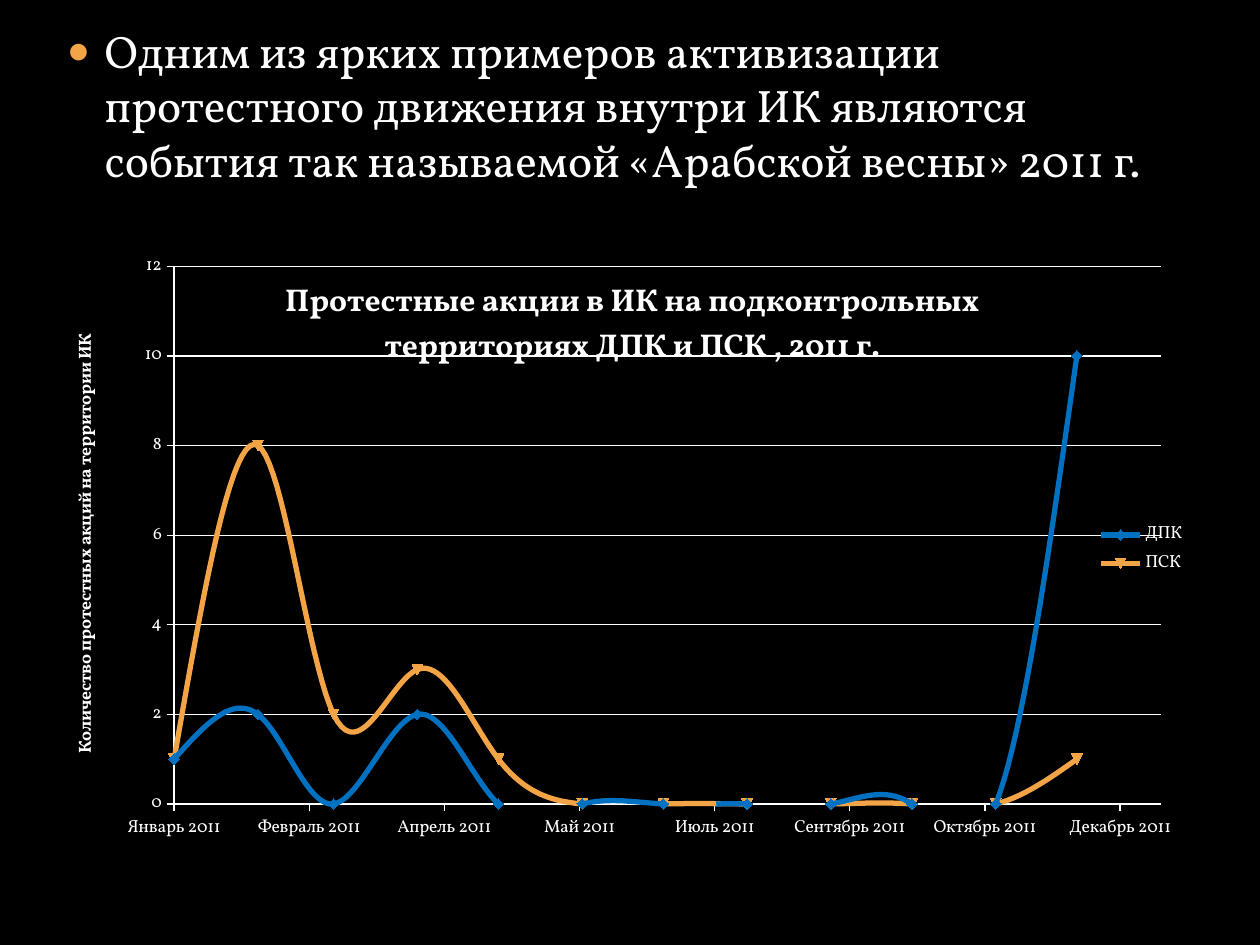
"""Build a slide with a statement and a chart of monthly protest actions."""
import itertools

import pptx
import pptx.chart.data
import pptx.dml.color
import pptx.enum.chart
import pptx.enum.text
import pptx.oxml
import pptx.oxml.ns
import pptx.util

COLORS = {"background": "000000", "text": "FFFFFF", "orange": "F3A447", "blue": "0070C0"}
FONT = "Vollkorn"
STATEMENT = ("Одним из ярких примеров активизации протестного движения внутри ИК "
             "являются события так называемой «Арабской весны» 2011 г.")
CHART_TITLE = "Протестные акции в ИК на подконтрольных территориях ДПК и ПСК , 2011 г."
AXIS_TITLE = "Количество протестных акций на территории ИК"
FIRST_DAY, LAST_DAY = 40544, 40909
MONTH_LENGTHS = [31, 28, 31, 30, 31, 30, 31, 31, 30, 31, 30]
SERIES = {
    "ДПК": ("blue", [1, 2, 0, 2, 0, 0, 0, 0, 0, 0, 0, 10]),
    "ПСК": ("orange", [1, 8, 2, 3, 1, 0, 0, 0, 0, 0, 0, 1]),
}


def color(name):
    return pptx.dml.color.RGBColor.from_string(COLORS[name])


def style_font(font, size, bold=False):
    font.name = FONT
    font.size = pptx.util.Pt(size)
    font.bold = bold
    font.color.rgb = color("text")


def style_line(line, name, width):
    line.color.rgb = color(name)
    line.width = pptx.util.Pt(width)


def place(element, inner=False, **shares):
    """Give a chart part a manual layout in shares of the chart's size."""
    for layout in element.findall(pptx.oxml.ns.qn("c:layout")):
        element.remove(layout)
    target = '<c:layoutTarget val="inner"/>' if inner else ""
    modes = "".join(f'<c:{key}Mode val="edge"/>' for key in "xy")
    values = "".join(f'<c:{key} val="{value}"/>' for key, value in shares.items())
    layout = pptx.oxml.parse_xml(
        f'<c:layout {pptx.oxml.ns.nsdecls("c")}><c:manualLayout>'
        f"{target}{modes}{values}</c:manualLayout></c:layout>")
    overlay = element.find(pptx.oxml.ns.qn("c:overlay"))
    if overlay is None:
        element.insert(0, layout)
    else:
        overlay.addprevious(layout)


def add_statement(slide):
    body = slide.placeholders[1]
    body.left, body.top, body.width, body.height = map(
        pptx.util.Inches, (0.43, 0.13, 8.99, 3.86))
    frame = body.text_frame
    frame.text = STATEMENT
    frame.auto_size = pptx.enum.text.MSO_AUTO_SIZE.NONE
    frame.vertical_anchor = pptx.enum.text.MSO_ANCHOR.TOP
    paragraph = frame.paragraphs[0]
    paragraph.line_spacing = 1.0
    paragraph.space_before = pptx.util.Pt(6)
    style_font(paragraph.runs[0].font, 26)
    properties = paragraph._p.get_or_add_pPr()
    indent = pptx.util.Inches(0.3)
    properties.set("marL", str(indent))
    properties.set("indent", str(-indent))
    namespace = pptx.oxml.ns.nsdecls("a")
    for bullet in (f'<a:buClr {namespace}><a:srgbClr val="{COLORS["orange"]}"/></a:buClr>',
                   f'<a:buSzPct {namespace} val="85000"/>',
                   f'<a:buChar {namespace} char="●"/>'):
        properties.append(pptx.oxml.parse_xml(bullet))


def set_title(owner, text, size, **shares):
    owner.text_frame.text = text
    style_font(owner.text_frame.paragraphs[0].runs[0].font, size, bold=True)
    place(owner._element, **shares)


def style_axis(axis, low, high, step):
    axis.minimum_scale, axis.maximum_scale, axis.major_unit = low, high, step
    axis.major_tick_mark = pptx.enum.chart.XL_TICK_MARK.OUTSIDE
    axis.minor_tick_mark = pptx.enum.chart.XL_TICK_MARK.NONE
    style_line(axis.format.line, "text", 0.75)
    style_font(axis.tick_labels.font, 10)


def add_protest_chart(slide):
    days = list(itertools.accumulate(MONTH_LENGTHS, initial=FIRST_DAY))
    data = pptx.chart.data.XyChartData()
    for name, (_, counts) in SERIES.items():
        series = data.add_series(name)
        for day, count in zip(days, counts):
            series.add_data_point(day, count)
    chart = slide.shapes.add_chart(
        pptx.enum.chart.XL_CHART_TYPE.XY_SCATTER_SMOOTH,
        *map(pptx.util.Inches, (0.51, 2.02, 8.99, 4.65)), data).chart
    style_font(chart.font, 10)
    plot = chart.plots[0]
    plot.vary_by_categories = False
    markers = (pptx.enum.chart.XL_MARKER_STYLE.DIAMOND, None)
    for series, (name, _), marker in zip(plot.series, SERIES.values(), markers):
        series._element.get_or_add_smooth().val = True
        style_line(series.format.line, name, 3)
        series.marker.style = marker
        series.marker.size = 6
        series.marker.format.fill.solid()
        series.marker.format.fill.fore_color.rgb = color(name)
        style_line(series.marker.format.line, name, 0.75)

    style_axis(chart.category_axis, FIRST_DAY, LAST_DAY, 50)
    chart.category_axis.has_major_gridlines = False
    labels = chart.category_axis.tick_labels
    labels.number_format = r"[$-419]mmmm\ yyyy;@"
    labels.number_format_is_linked = False
    style_axis(chart.value_axis, 0, 12, 2)
    chart.value_axis.has_major_gridlines = True
    style_line(chart.value_axis.major_gridlines.format.line, "text", 0.75)

    chart.has_title = True
    set_title(chart.chart_title, CHART_TITLE, 18, x=0.19, y=0.03)
    set_title(chart.value_axis.axis_title, AXIS_TITLE, 10, x=0.005, y=0.13)
    chart.has_legend = True
    chart.legend.position = pptx.enum.chart.XL_LEGEND_POSITION.RIGHT
    chart.legend.include_in_layout = False
    style_font(chart.legend.font, 10)
    place(chart.legend._element, x=0.91, y=0.45)
    plot_area = chart._chartSpace.chart.plotArea
    place(plot_area, inner=True, x=0.097, y=0.02, w=0.871, h=0.918)


def main():
    presentation = pptx.Presentation()
    presentation.slide_width = pptx.util.Inches(10)
    presentation.slide_height = pptx.util.Inches(7.5)
    slide = presentation.slides.add_slide(presentation.slide_layouts[1])
    slide.background.fill.solid()
    slide.background.fill.fore_color.rgb = color("background")
    title = slide.shapes.title._element
    title.getparent().remove(title)
    add_statement(slide)
    add_protest_chart(slide)
    presentation.save("out.pptx")


if __name__ == "__main__":
    main()
